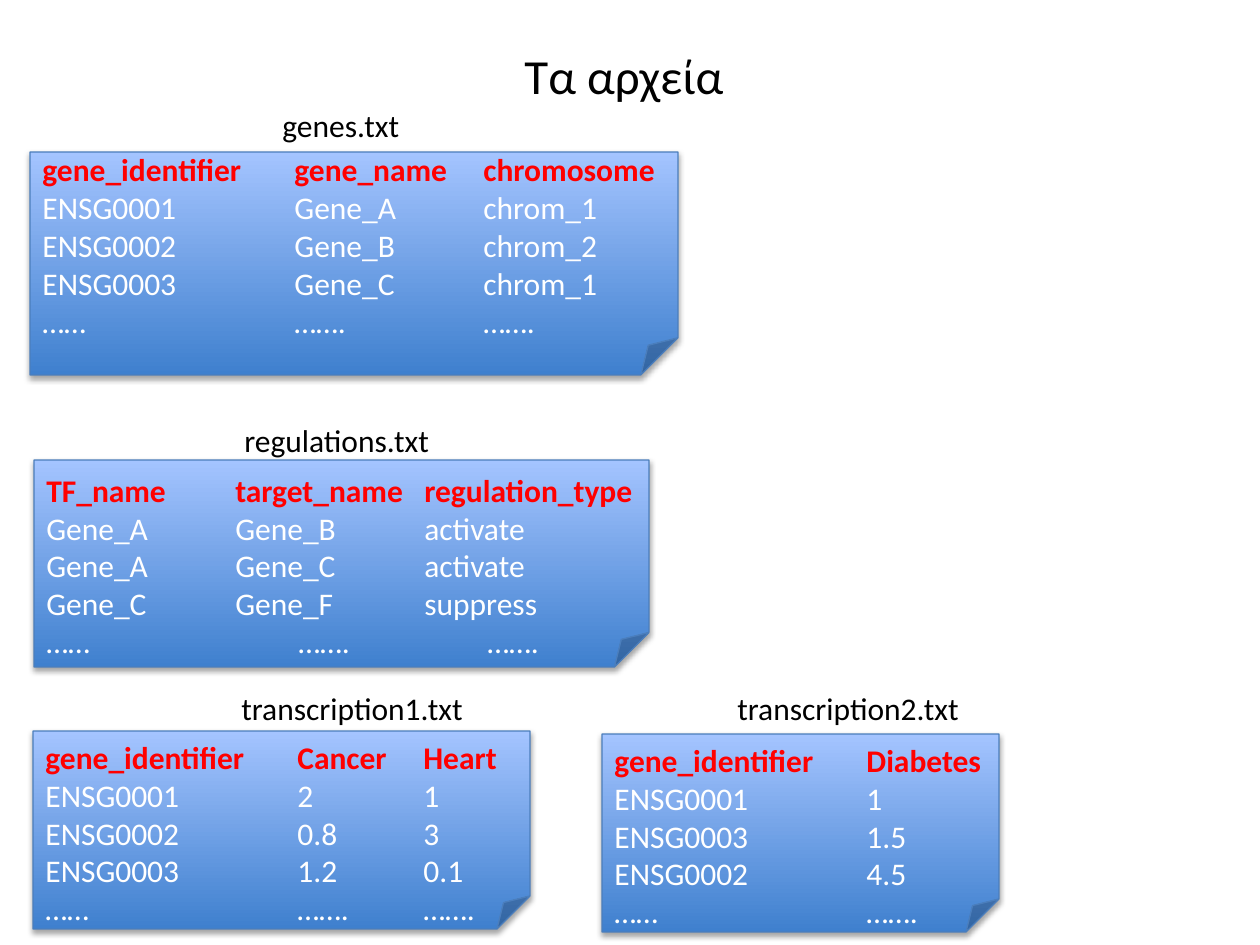
from dataclasses import dataclass

from lxml.etree import SubElement
from pptx import Presentation
from pptx.dml.color import RGBColor
from pptx.enum.shapes import MSO_SHAPE as Preset
from pptx.enum.text import MSO_ANCHOR as Anchor, PP_ALIGN as Align
from pptx.oxml.ns import qn
from pptx.util import Emu, Pt

EMU_PER_PX = 914400 / 126
COLORS = {
    "black": "000000",
    "white": "FFFFFF",
    "header": "FF0000",
    "bottom": "3F80CE",
    "top": "A4C4FF",
    "border": "4B7EBC",
}
LABEL_FORMAT = {"name": "Calibri", "size": Pt(18), "bold": False}
HEADER_FORMAT = LABEL_FORMAT | {"bold": True}
TITLE_FORMAT = LABEL_FORMAT | {"size": Pt(28)}
INSET = 6
LINE_HEIGHT = 38


@dataclass(frozen=True)
class Box:
    left: int
    top: int
    width: int
    height: int


@dataclass(frozen=True)
class FileNote:
    name: str
    label: Box
    box: Box
    rows: list[tuple[str, ...]]
    tabs: tuple[int, ...]
    last_tabs: tuple[int, ...]
    top_inset: int = INSET + LINE_HEIGHT


NOTES = [
    FileNote(
        "genes.txt", Box(270, 100, 145, 50), Box(30, 152, 648, 223),
        [
            ("gene_identifier", "gene_name", "chromosome"),
            ("ENSG0001", "Gene_A", "chrom_1"),
            ("ENSG0002", "Gene_B", "chrom_2"),
            ("ENSG0003", "Gene_C", "chrom_1"),
            ("……", "…….", "……."),
        ],
        (252, 441), (252, 441), INSET,
    ),
    FileNote(
        "regulations.txt", Box(232, 415, 213, 50), Box(34, 460, 615, 207),
        [
            ("TF_name", "target_name", "regulation_type"),
            ("Gene_A", "Gene_B", "activate"),
            ("Gene_A", "Gene_C", "activate"),
            ("Gene_C", "Gene_F", "suppress"),
            ("……", "…….", "……."),
        ],
        (189, 378), (252, 441),
    ),
    FileNote(
        "transcription1.txt", Box(229, 683, 251, 50), Box(33, 731, 497, 198),
        [
            ("gene_identifier", "Cancer", "Heart"),
            ("ENSG0001", "2", "1"),
            ("ENSG0002", "0.8", "3"),
            ("ENSG0003", "1.2", "0.1"),
            ("……", "…….", "……."),
        ],
        (252, 378), (252, 378),
    ),
    FileNote(
        "transcription2.txt", Box(725, 683, 251, 50), Box(602, 734, 397, 198),
        [
            ("gene_identifier", "Diabetes"),
            ("ENSG0001", "1"),
            ("ENSG0003", "1.5"),
            ("ENSG0002", "4.5"),
            ("……", "……."),
        ],
        (252,), (252,),
    ),
]


def px(value: int) -> Emu:
    return Emu(round(value * EMU_PER_PX))


def rgb(name: str) -> RGBColor:
    return RGBColor.from_string(COLORS[name])


def place(box: Box) -> tuple[Emu, ...]:
    return px(box.left), px(box.top), px(box.width), px(box.height)


def set_attributes(target, values: dict) -> None:
    for name, value in values.items():
        setattr(target, name, value)


def write(paragraph, text: str, color: str, font_format: dict) -> None:
    run = paragraph.add_run()
    run.text = text
    set_attributes(run.font, font_format)
    run.font.color.rgb = rgb(color)


def add_tab_stops(paragraph, stops: tuple[int, ...]) -> None:
    tab_list = SubElement(paragraph._p.get_or_add_pPr(), qn("a:tabLst"))
    for stop in stops:
        SubElement(tab_list, qn("a:tab"), pos=str(px(stop)), algn="l")


def add_shadow(shape) -> None:
    shape.shadow.inherit = False
    effects = shape._element.spPr.find(qn("a:effectLst"))
    shadow = SubElement(effects, qn("a:outerShdw"), blurRad="40000",
                        dist="23000", dir="5400000", rotWithShape="0")
    color = SubElement(shadow, qn("a:srgbClr"), val=COLORS["black"])
    SubElement(color, qn("a:alpha"), val="35000")


def add_label(slide, text: str, box: Box) -> None:
    label = slide.shapes.add_textbox(*place(box))
    label.text_frame.word_wrap = False
    write(label.text_frame.paragraphs[0], text, "black", LABEL_FORMAT)


def add_note(slide, note: FileNote) -> None:
    shape = slide.shapes.add_shape(Preset.FOLDED_CORNER, *place(note.box))
    shape.fill.gradient()
    shape.fill.gradient_angle = 90
    for stop, color, position in zip(shape.fill.gradient_stops, ("bottom", "top"), (0, 1)):
        stop.color.rgb = rgb(color)
        stop.position = position
    shape.line.color.rgb = rgb("border")
    shape.line.width = Pt(0.75)
    add_shadow(shape)

    frame = shape.text_frame
    set_attributes(frame, {
        "word_wrap": True,
        "vertical_anchor": Anchor.MIDDLE,
        "margin_top": px(note.top_inset),
        "margin_bottom": px(INSET),
    })
    last = len(note.rows) - 1
    for index, row in enumerate(note.rows):
        paragraph = frame.add_paragraph() if index else frame.paragraphs[0]
        paragraph.alignment = Align.JUSTIFY
        add_tab_stops(paragraph, note.last_tabs if index == last else note.tabs)
        if index:
            write(paragraph, "\t".join(row), "white", LABEL_FORMAT)
        else:
            write(paragraph, "\t".join(row), "header", HEADER_FORMAT)


def add_title(slide, text: str, box: Box) -> None:
    title = slide.shapes.title
    set_attributes(title, dict(zip(("left", "top", "width", "height"), place(box))))
    title.text_frame.vertical_anchor = Anchor.MIDDLE
    paragraph = title.text_frame.paragraphs[0]
    paragraph.alignment = Align.CENTER
    write(paragraph, text, "black", TITLE_FORMAT)


def main() -> None:
    presentation = Presentation()
    presentation.slide_width = px(1260)
    presentation.slide_height = px(945)
    slide = presentation.slides.add_slide(presentation.slide_layouts[5])
    add_title(slide, "Τα αρχεία", Box(398, 38, 452, 74))
    for note in NOTES:
        add_note(slide, note)
        add_label(slide, note.name, note.label)
    presentation.save("out.pptx")


if __name__ == "__main__":
    main()
